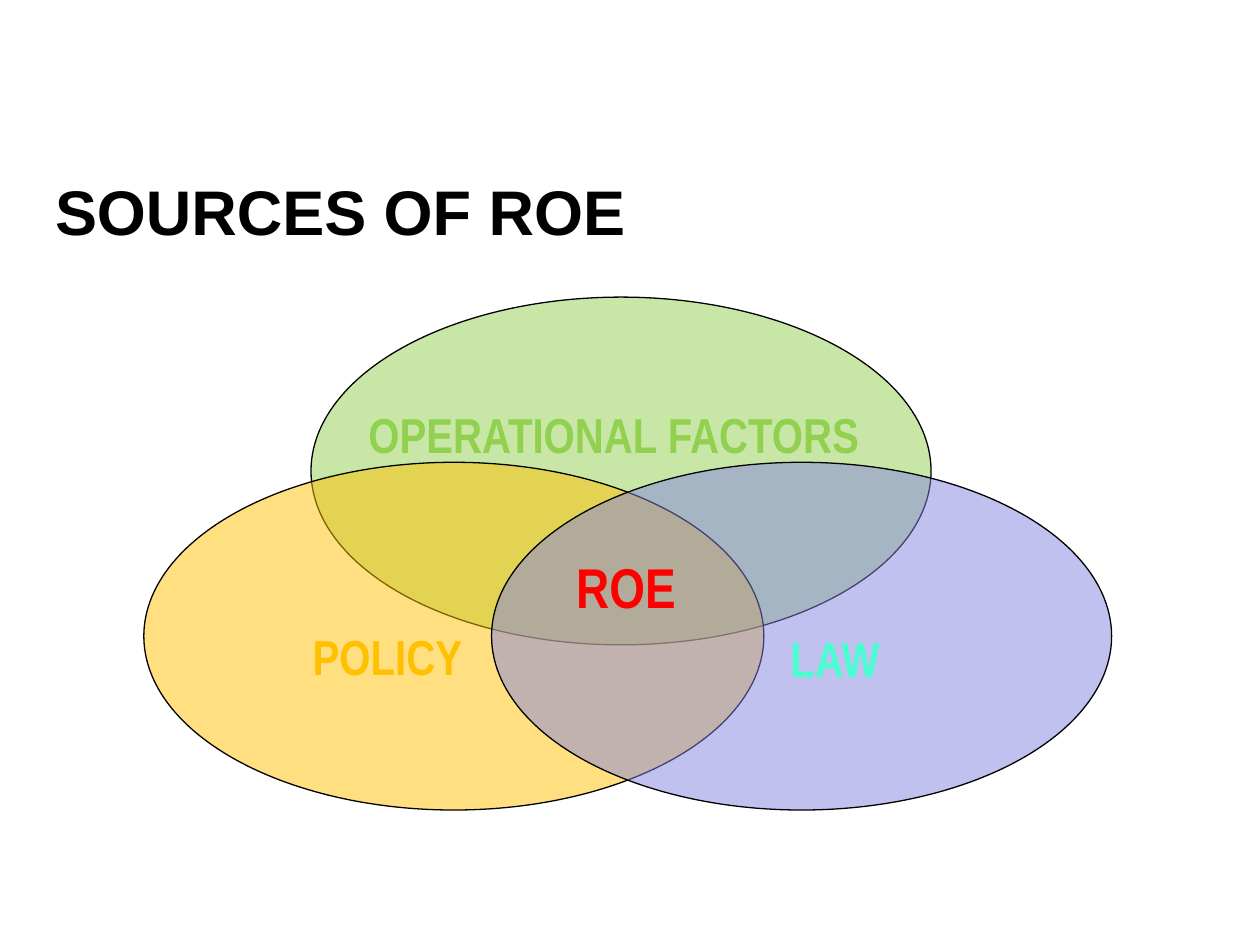
from lxml.etree import SubElement
from pptx import Presentation
from pptx.dml.color import RGBColor
from pptx.enum.shapes import MSO_SHAPE
from pptx.enum.text import MSO_ANCHOR, PP_ALIGN
from pptx.oxml.ns import qn
from pptx.util import Cm, Pt

COLORS = {
    "black": "000000",
    "operations": "92D050",
    "policy": "FFC000",
    "law": "8585E0",
    "law_label": "47FFD1",
    "roe": "FF0000",
}


class VennSlide:
    title_font = "Arial"
    label_font = "Arial Narrow"
    ellipse_width, ellipse_height = 12.5, 7.01

    def __init__(self, presentation):
        self.slide = presentation.slides.add_slide(presentation.slide_layouts[6])

    def color(self, name):
        return RGBColor.from_string(COLORS[name])

    def ellipse(self, left, top, color):
        shape = self.slide.shapes.add_shape(
            MSO_SHAPE.OVAL, Cm(left), Cm(top),
            Cm(self.ellipse_width), Cm(self.ellipse_height))
        shape.shadow.inherit = False
        shape.fill.solid()
        shape.fill.fore_color.rgb = self.color(color)
        # Half-transparent fill
        fill_color = shape.fill._xPr.find(qn("a:solidFill"))[0]
        SubElement(fill_color, qn("a:alpha"), val="50000")
        shape.line.color.rgb = self.color("black")
        shape.line.width = Pt(0.75)
        return shape

    def text(self, text, left, top, width, height, size, color, font):
        box = self.slide.shapes.add_textbox(Cm(left), Cm(top), Cm(width), Cm(height))
        text_frame = box.text_frame
        text_frame.word_wrap = True
        text_frame.text = text
        paragraph = text_frame.paragraphs[0]
        run_font = paragraph.runs[0].font
        run_font.name = font
        run_font.size = Pt(size)
        run_font.bold = True
        run_font.color.rgb = self.color(color)
        return text_frame

    def title(self, text, left, top, width, height):
        text_frame = self.text(text, left, top, width, height, 36, "black", self.title_font)
        text_frame.vertical_anchor = MSO_ANCHOR.MIDDLE
        text_frame.paragraphs[0].line_spacing = 0.9

    def label(self, text, left, top, width, color, size=28, height=1.45):
        text_frame = self.text(text, left, top, width, height, size, color, self.label_font)
        text_frame.paragraphs[0].alignment = PP_ALIGN.CENTER


def main():
    presentation = Presentation()
    presentation.slide_width, presentation.slide_height = Cm(25.4), Cm(19.05)
    venn = VennSlide(presentation)

    venn.title("SOURCES OF ROE", 0.86, 3.18, 23.52, 2.31)

    # Overlapping ellipses, back to front
    lower_top = 9.32
    venn.ellipse(6.27, 5.99, "operations")
    venn.ellipse(2.9, lower_top, "policy")
    venn.ellipse(9.91, lower_top, "law")

    # Labels
    venn.label("ROE", 10.92, 11.02, 3.4, "roe", size=32, height=1.63)
    venn.label("OPERATIONAL FACTORS", 7.01, 8.03, 10.72, "operations")
    venn.label("POLICY", 5.31, 12.5, 5, "policy")
    venn.label("LAW", 14.66, 12.55, 4.34, "law_label")

    presentation.save("out.pptx")


if __name__ == "__main__":
    main()
